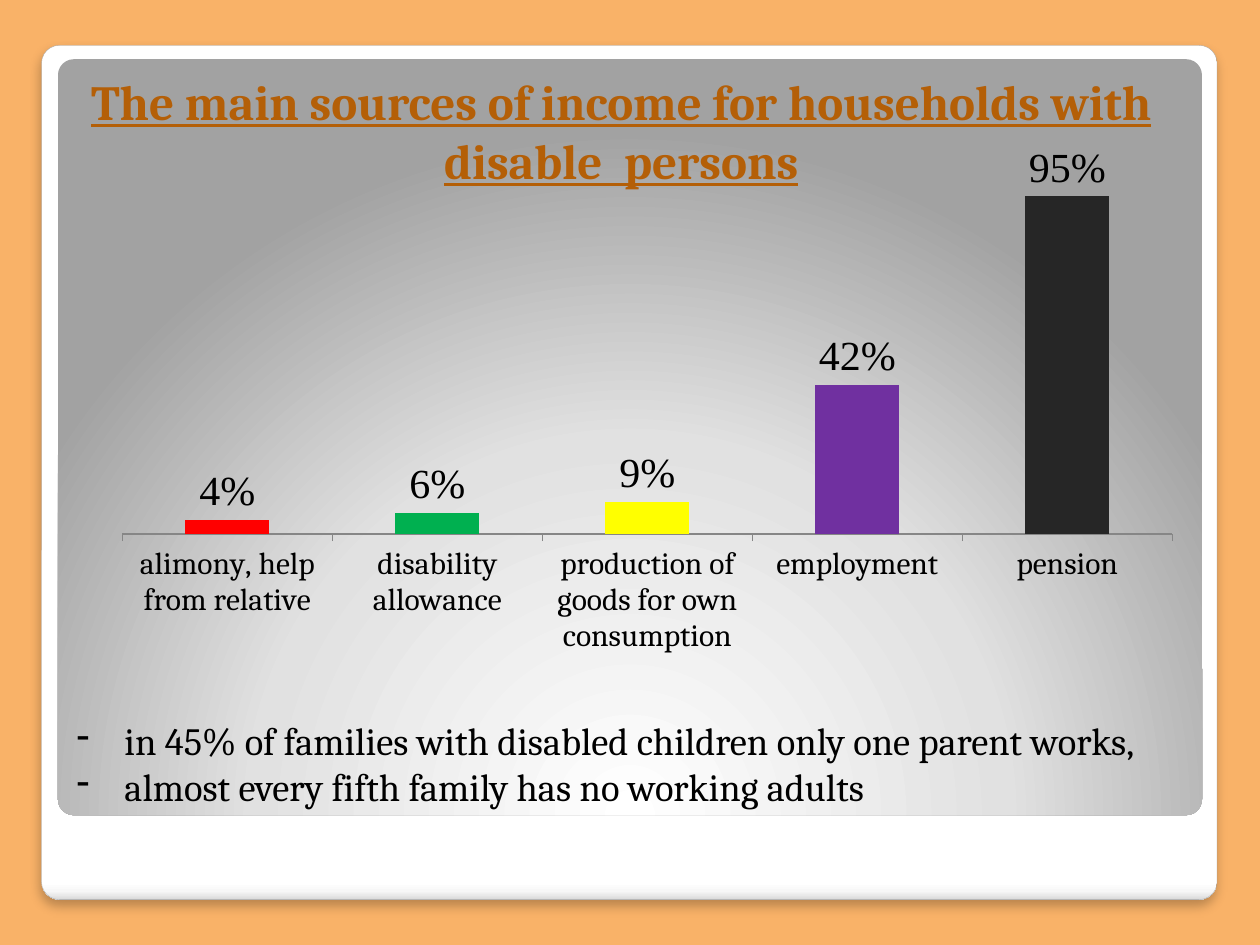
from lxml.etree import SubElement
from pptx import Presentation
from pptx.chart.data import CategoryChartData
from pptx.dml.color import RGBColor
from pptx.enum.chart import XL_CHART_TYPE, XL_LABEL_POSITION, XL_TICK_MARK
from pptx.enum.shapes import MSO_SHAPE
from pptx.enum.text import MSO_ANCHOR, PP_ALIGN
from pptx.oxml import parse_xml
from pptx.oxml.ns import nsdecls, qn
from pptx.util import Inches, Pt

COLORS = {
    "background": "F9B268", "title": "B45F07", "text": "000000",
    "edge": "A4A4A4", "axis": "868686", "series": "F07F09",
}
TITLE = "The main sources of income for households with disable  persons"
SOURCES = [
    ("alimony, help from relative", 0.04, "FF0000"),
    ("disability allowance", 0.06, "00B050"),
    ("production of goods for own consumption", 0.09, "FFFF00"),
    ("employment", 0.42, "7030A0"),
    ("pension", 0.95, "262626"),
]
NOTES = [
    "in 45% of families with disabled children only one parent works,",
    "almost every fifth family has no working adults",
]
FRAME_STOPS = [(0, "FFFFFF"), (98, "FFFFFF"), (99, "F7F7F7"), (100, "DADADA")]
PANEL_STOPS = [(0, "FFFFFF"), (55, "E1E1E1"), (100, "A2A2A2")]
LINEAR = '<a:lin ang="5400000" scaled="0"/>'
RADIAL = ('<a:path path="circle"><a:fillToRect l="50000" t="175000" '
          'r="50000" b="-75000"/></a:path>')
PLOT = {"x": 0.061, "y": 0.044, "w": 0.939, "h": 0.651}


def rgb(name):
    return RGBColor.from_string(COLORS.get(name, name))


def box(*lengths):
    return [Inches(v) for v in lengths]


def style(font, size, name="Cambria", color="text"):
    font.size, font.name = Pt(size), name
    font.color.rgb = rgb(color)


def add_card(s, at, stops, direction):
    sp = s.shapes.add_shape(MSO_SHAPE.ROUNDED_RECTANGLE, *box(*at))
    sp.adjustments[0] = 0.021
    sp.shadow.inherit = False
    sp.line.fill.background()
    marks = "".join(f'<a:gs pos="{pos * 1000}"><a:srgbClr val="{color}"/></a:gs>'
                    for pos, color in stops)
    grad = parse_xml(f'<a:gradFill {nsdecls("a")} rotWithShape="1">'
                     f'<a:gsLst>{marks}</a:gsLst>{direction}</a:gradFill>')
    sp._element.spPr.find(qn("a:prstGeom")).addnext(grad)
    return sp


def add_shadow(sp):
    effects = sp._element.spPr.find(qn("a:effectLst"))
    effects.append(parse_xml(
        f'<a:outerShdw {nsdecls("a")} blurRad="{Pt(6)}" dist="{Pt(4)}" dir="5400000" '
        'algn="t" rotWithShape="0"><a:srgbClr val="000000"><a:alpha val="25000"/>'
        '</a:srgbClr></a:outerShdw>'))


def set_title(s):
    sp = s.shapes.title
    sp.left, sp.top, sp.width, sp.height = box(0.43, 0.76, 9, 0.79)
    s.shapes._spTree.append(sp._element)
    tf = sp.text_frame
    tf.word_wrap = True
    tf.vertical_anchor = MSO_ANCHOR.BOTTOM
    p = tf.paragraphs[0]
    p.alignment = PP_ALIGN.CENTER
    r = p.add_run()
    r.text = TITLE
    style(r.font, 28, color="title")
    r.font.bold = r.font.underline = True


def place_plot(chart):
    area = chart._chartSpace.chart.plotArea
    for old in area.findall(qn("c:layout")):
        area.remove(old)
    layout = parse_xml(f'<c:layout {nsdecls("c")}/>')
    manual = SubElement(layout, qn("c:manualLayout"))
    values = {"layoutTarget": "inner", "xMode": "edge", "yMode": "edge", **PLOT}
    for tag, value in values.items():
        SubElement(manual, qn(f"c:{tag}")).set("val", str(value))
    area.insert(0, layout)


def add_income_chart(s):
    names, values, fills = zip(*SOURCES)
    data = CategoryChartData(number_format="0%")
    data.categories = names
    data.add_series("Series 1", values)
    chart = s.shapes.add_chart(XL_CHART_TYPE.COLUMN_CLUSTERED,
                               *box(0.43, 1.15, 8.88, 4.41), data).chart
    chart.has_legend = chart.has_title = False
    style(chart.font, 10, "DejaVu Sans")
    place_plot(chart)

    axis = chart.category_axis
    axis.major_tick_mark = XL_TICK_MARK.OUTSIDE
    axis.format.line.color.rgb = rgb("axis")
    style(axis.tick_labels.font, 18)
    scale = chart.value_axis
    scale.minimum_scale, scale.maximum_scale = 0, 1
    scale.has_major_gridlines = scale.visible = False

    plot = chart.plots[0]
    plot.gap_width = 150
    plot.vary_by_categories = False
    series = plot.series[0]
    series.format.fill.solid()
    series.format.fill.fore_color.rgb = rgb("series")
    for i, color in enumerate(fills):
        fill = series.points[i].format.fill
        fill.solid()
        fill.fore_color.rgb = rgb(color)
    labels = series.data_labels
    labels.show_value = True
    labels.position = XL_LABEL_POSITION.OUTSIDE_END
    labels.number_format, labels.number_format_is_linked = "0%", False
    style(labels.font, 24, "Times New Roman")


def add_notes_list(s):
    tf = s.shapes.add_textbox(*box(0.51, 5.64, 9.16, 0.84)).text_frame
    tf.word_wrap = True
    for i, note in enumerate(NOTES):
        p = tf.add_paragraph() if i else tf.paragraphs[0]
        pPr = p._p.get_or_add_pPr()
        pPr.set("marL", str(Inches(0.38)))
        pPr.set("indent", str(-Inches(0.38)))
        SubElement(pPr, qn("a:buFontTx"))
        SubElement(pPr, qn("a:buChar")).set("char", "-")
        r = p.add_run()
        r.text = note
        style(r.font, 22)


def main():
    """Build the household income slide."""
    prs = Presentation()
    prs.slide_width, prs.slide_height = box(10, 7.5)
    s = prs.slides.add_slide(prs.slide_layouts[5])
    s.background.fill.solid()
    s.background.fill.fore_color.rgb = rgb("background")
    frame = add_card(s, (0.33, 0.36, 9.33, 6.78), FRAME_STOPS, LINEAR)
    frame.line.color.rgb = rgb("edge")
    frame.line.width = Pt(0.16)
    add_shadow(frame)
    add_card(s, (0.46, 0.47, 9.08, 6), PANEL_STOPS, RADIAL)
    set_title(s)
    add_income_chart(s)
    add_notes_list(s)
    prs.save("out.pptx")


if __name__ == "__main__":
    main()
